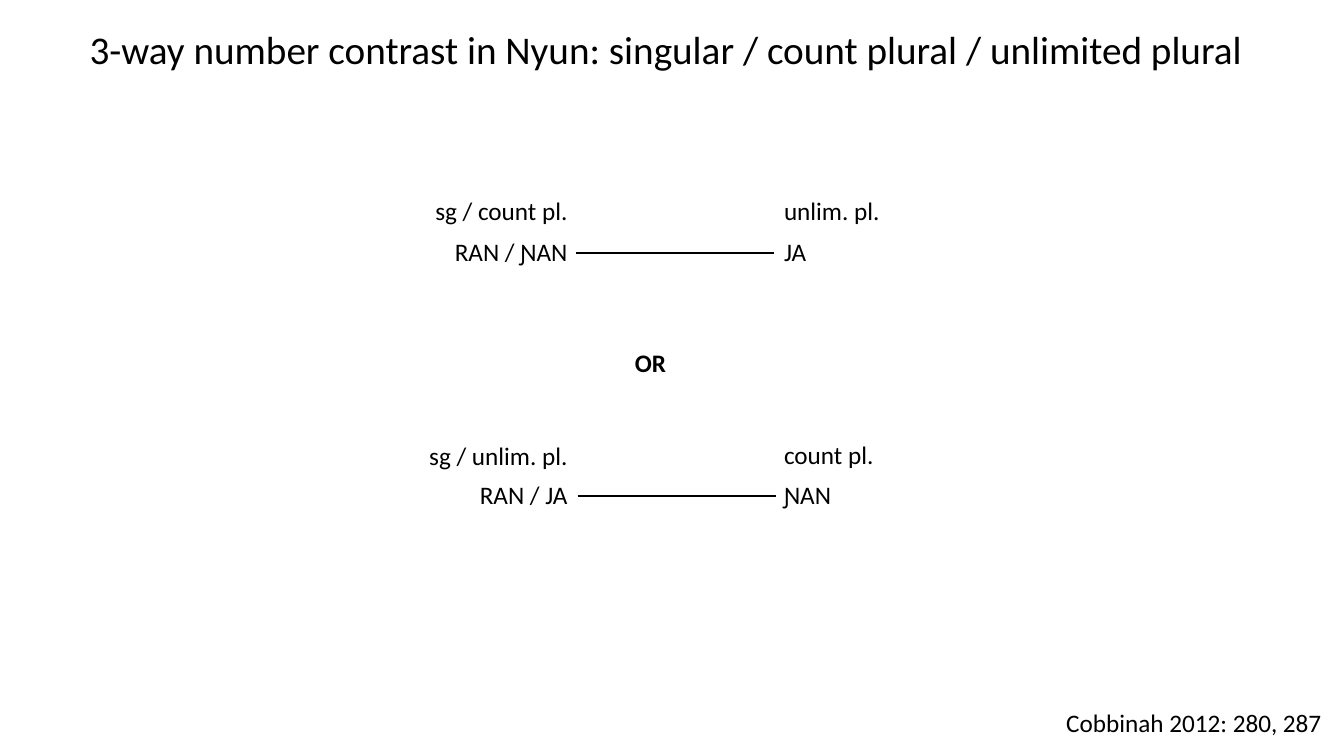
from lxml.etree import SubElement
from pptx import Presentation
from pptx.dml.color import RGBColor
from pptx.enum.shapes import MSO_CONNECTOR
from pptx.enum.text import MSO_ANCHOR, MSO_AUTO_SIZE, PP_ALIGN
from pptx.oxml.ns import qn
from pptx.util import Pt


def color(value):
    return RGBColor.from_string(value)


class SlideBuilder:
    font = "Calibri"
    ink = "000000"
    size = 18
    label_height = 28.8
    left_edge = 412.56
    right_edge = 552.96

    def __init__(self, slide):
        self.slide = slide

    def text(self, text, x, y, w, h=label_height, size=size, bold=False,
             align=PP_ALIGN.LEFT, shapes=None):
        shapes = self.slide.shapes if shapes is None else shapes
        sp = shapes.add_textbox(Pt(x), Pt(y), Pt(w), Pt(h))
        tf = sp.text_frame
        tf.word_wrap = False
        tf.auto_size = MSO_AUTO_SIZE.SHAPE_TO_FIT_TEXT
        p = tf.paragraphs[0]
        p.text = text
        p.alignment = align
        p.font.name = self.font
        p.font.size = Pt(size)
        p.font.bold = bold
        p.font.color.rgb = color(self.ink)
        return sp

    def title(self, text, x, y, w, h):
        tf = self.text(text, x, y, w, h, size=28).text_frame
        tf.word_wrap = True
        tf.auto_size = MSO_AUTO_SIZE.NONE
        tf.vertical_anchor = MSO_ANCHOR.MIDDLE
        tf.paragraphs[0].line_spacing = 0.9

    def line(self, x, y, length, shapes):
        line = shapes.add_connector(
            MSO_CONNECTOR.STRAIGHT, Pt(x), Pt(y), Pt(x + length), Pt(y))
        line.line.color.rgb = color(self.ink)
        line.line.width = Pt(1.5)
        SubElement(line._element.spPr, qn("a:effectLst"))

    def contrast(self, rows, line_x, line_y):
        shapes = self.slide.shapes.add_group_shape().shapes
        for left, left_y, left_w, right, right_y, right_w in rows:
            self.text(left, self.left_edge - left_w, left_y, left_w,
                      align=PP_ALIGN.RIGHT, shapes=shapes)
            self.text(right, self.right_edge, right_y, right_w, shapes=shapes)
        self.line(line_x, line_y, 141.84, shapes)


def main():
    prs = Presentation()
    prs.slide_width, prs.slide_height = Pt(960), Pt(540)
    s = SlideBuilder(prs.slides.add_slide(prs.slide_layouts[6]))

    s.title("3-way number contrast in Nyun: singular / count plural / unlimited plural",
            56.88, 14.4, 885.6, 45.36)
    s.contrast([
        ("sg / count pl.", 136.08, 110.16, "unlim. pl.", 136.08, 83.52),
        ("RAN / ƝAN", 165.6, 95.76, "JA", 165.6, 30.96),
    ], 411.12, 180.72)
    s.text("OR", 446.4, 244.8, 36.72, bold=True)
    s.contrast([
        ("sg / unlim. pl.", 311.04, 114.48, "count pl.", 310.32, 79.2),
        ("RAN / JA", 339.12, 77.76, "ƝAN", 339.12, 48.24),
    ], 412.56, 354.24)
    s.text("Cobbinah 2012: 280, 287", 751.68, 501.84, 199.44,
           align=PP_ALIGN.RIGHT)

    prs.save("out.pptx")


if __name__ == "__main__":
    main()
